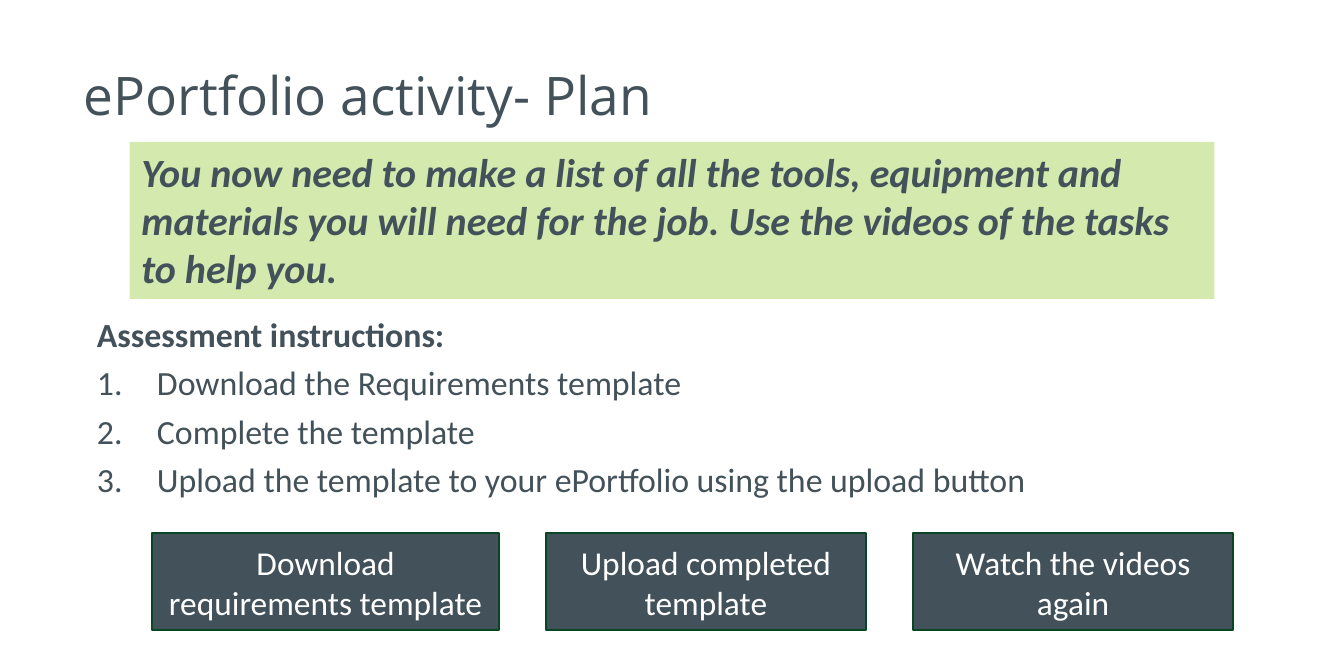
from lxml import etree
from pptx import Presentation
from pptx import util as u
from pptx.dml.color import RGBColor
from pptx.enum import shapes, text
from pptx.oxml.ns import qn

HUES = {"slate": "43525A", "lime": "D3E9AD", "edge": "094724", "white": "FFFFFF"}
STEPS = [
    "Download the Requirements template",
    "Complete the template",
    "Upload the template to your ePortfolio using the upload button",
]
BUTTONS = [
    ("Download requirements template", 208),
    ("Upload completed template", 192.2),
    ("Watch the videos again", 192.2),
]


def hue(name):
    """Return the named colour."""
    return RGBColor.from_string(HUES[name])


def style(para, size, color="slate", face="Calibri", bold=False, slant=False):
    """Format every run of a paragraph."""
    for run in para.runs:
        font = run.font
        font.name, font.size = face, u.Pt(size)
        font.bold, font.italic = bold, slant
        font.color.rgb = hue(color)


def add_text(slide, box):
    """Add a wrapping text box and return its frame."""
    frame = slide.shapes.add_textbox(*map(u.Pt, box)).text_frame
    frame.word_wrap = True
    return frame


def add_rect(slide, box, fill, words):
    """Add a flat rectangle holding words."""
    rect = slide.shapes.add_shape(shapes.MSO_SHAPE.RECTANGLE, *map(u.Pt, box))
    rect.shadow.inherit = False
    rect.fill.solid()
    rect.fill.fore_color.rgb = hue(fill)
    rect.line.fill.background()
    rect.text_frame.word_wrap = True
    rect.text_frame.text = words
    return rect


def add_title(slide, box):
    """Place the heading, centred vertically in its box."""
    frame = add_text(slide, box)
    frame.vertical_anchor = text.MSO_ANCHOR.MIDDLE
    frame.text = "ePortfolio activity- Plan"
    frame.paragraphs[0].line_spacing = 0.9
    style(frame.paragraphs[0], 31.9, face="Open Sans")


def add_banner(slide, box):
    """Place the highlighted task statement."""
    rect = add_rect(slide, box, "lime",
                    "You now need to make a list of all the tools, equipment and "
                    "materials you will need for the job. Use the videos of the "
                    "tasks to help you.")
    rect.text_frame.vertical_anchor = text.MSO_ANCHOR.TOP
    para = rect.text_frame.paragraphs[0]
    para.alignment = text.PP_ALIGN.LEFT
    style(para, 24, bold=True, slant=True)


def add_steps(slide, box):
    """Place the instructions heading and its numbered steps."""
    frame = add_text(slide, box)
    frame.text = "\n".join(["Assessment instructions:"] + STEPS)
    for i, para in enumerate(frame.paragraphs):
        para.line_spacing, para.space_before = 0.9, u.Pt(7.2)
        style(para, 20.3, bold=i == 0)
        if i:
            props = para._p.get_or_add_pPr()
            props.set("marL", str(u.Pt(36)))
            props.set("indent", str(-u.Pt(36)))
            mark = etree.SubElement(props, qn("a:buAutoNum"))
            mark.set("type", "arabicPeriod")


def add_buttons(slide, box, gap=28.1):
    """Place the buttons in a row with equal gaps."""
    left, top, _, height = box
    for words, width in BUTTONS:
        rect = add_rect(slide, (left, top, width, height), "slate", words)
        rect.line.color.rgb = hue("edge")
        rect.line.width = u.Pt(1)
        rect.text_frame.vertical_anchor = text.MSO_ANCHOR.MIDDLE
        para = rect.text_frame.paragraphs[0]
        para.alignment = text.PP_ALIGN.CENTER
        style(para, 20, "white")
        left += width + gap


def main():
    """Build and save the slide."""
    deck = Presentation()
    deck.slide_width, deck.slide_height = u.Pt(806.4), u.Pt(391)
    slide = deck.slides.add_slide(deck.slide_layouts[6])
    add_title(slide, (43.2, 20.9, 599.8, 75.6))
    add_steps(slide, (51.1, 187.2, 733, 143.3))
    add_banner(slide, (77.8, 85, 650.9, 94.3))
    add_buttons(slide, (91.4, 319.7, 648.6, 58.3))
    deck.save("out.pptx")


if __name__ == "__main__":
    main()
